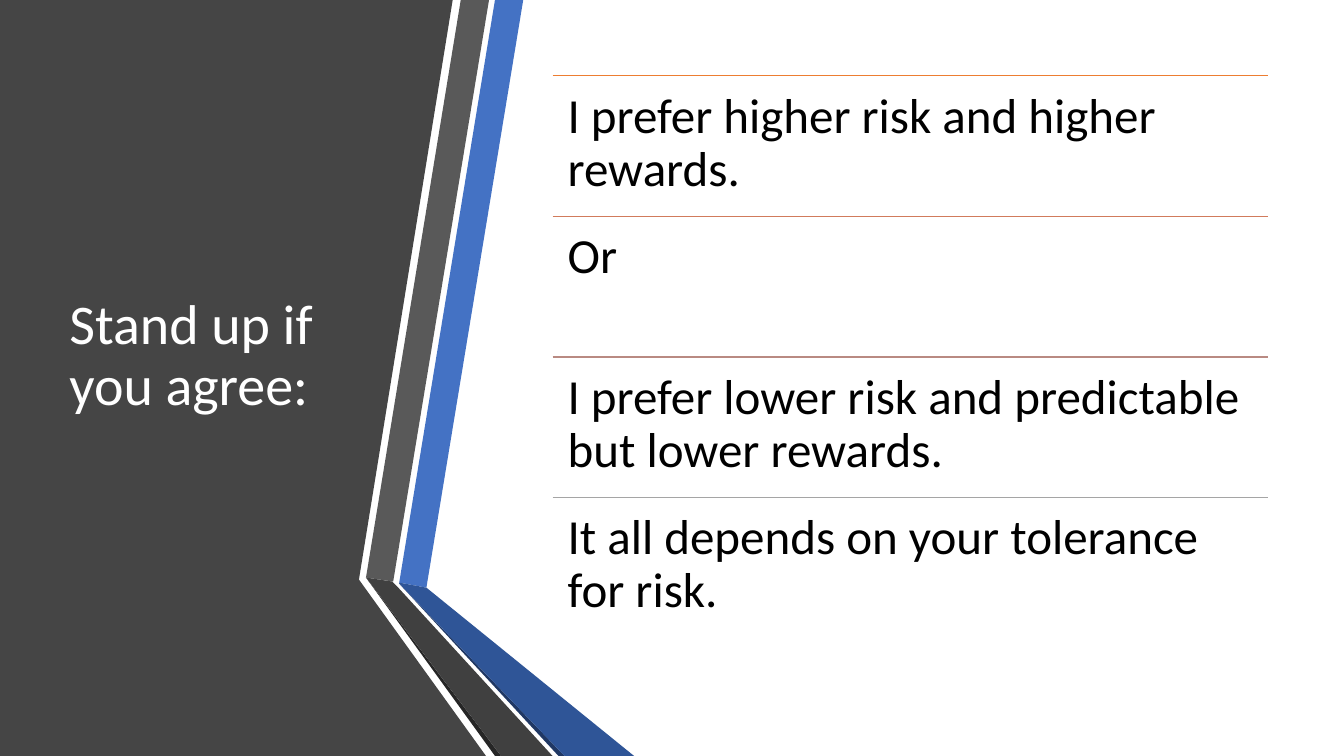
from lxml.etree import SubElement
from pptx import Presentation
from pptx.dml.color import RGBColor
from pptx.enum.shapes import MSO_CONNECTOR
from pptx.enum.text import MSO_ANCHOR
from pptx.oxml.ns import qn
from pptx.util import Inches, Pt

WIDTH, HEIGHT = 13.33, 7.5
FONT = "Calibri"
COLORS = {
    "panel": "454545", "blue": "4472C4", "gray": "595959",
    "gray_edge": "262626", "blue_edge": "203864",
    "blue_fold": "2F5597", "gray_fold": "404040",
    "white": "FFFFFF", "black": "000000",
}
# Outlines in hundredths of an inch, as the builder keeps whole units only
UNIT = Inches(0.01)
PANEL = [(0, 0), (449, 0), (356, 575), (482, 750), (0, 750)]
# Ribbon pieces from back to front: colour name and corner points
RIBBONS = [
    ("blue", [(396, 578), (423, 583), (519, 0), (491, 0)]),
    ("gray", [(485, 0), (457, 0), (363, 573), (390, 577)]),
    ("gray_edge", [(363, 573), (491, 750), (497, 750)]),
    ("blue_edge", [(396, 579), (554, 750), (560, 750)]),
    ("blue_fold", [(396, 579), (560, 750), (629, 750), (423, 583), (396, 578)]),
    ("gray_fold", [(548, 750), (395, 583), (389, 577), (363, 573), (497, 750)]),
]
# Statements, each with the colour of the rule above it
STATEMENTS = [
    ("I prefer higher risk and higher rewards.", "ED7D31"),
    ("Or", "D17B5C"),
    ("I prefer lower risk and predictable but lower rewards.", "B98A82"),
    ("It all depends on your tolerance for risk.", "A5A5A5"),
]


def add_polygon(slide, points, color):
    builder = slide.shapes.build_freeform(*points[0], scale=UNIT)
    builder.add_line_segments(points[1:], close=True)
    shape = builder.convert_to_shape()
    shape.shadow.inherit = False
    shape.fill.solid()
    shape.fill.fore_color.rgb = RGBColor.from_string(color)
    shape.line.fill.background()


def add_text(slide, box, text, *, size, color, anchor=MSO_ANCHOR.TOP, inset=(0.1, 0.05)):
    frame = slide.shapes.add_textbox(*map(Inches, box)).text_frame
    frame.word_wrap = True
    frame.vertical_anchor = anchor
    frame.margin_left = frame.margin_right = Inches(inset[0])
    frame.margin_top = frame.margin_bottom = Inches(inset[1])
    paragraph = frame.paragraphs[0]
    paragraph.line_spacing = 0.9
    run = paragraph.add_run()
    run.text = text
    run.font.name = FONT
    run.font.size = Pt(size)
    run.font.color.rgb = RGBColor.from_string(color)


def add_rule(slide, left, top, width, color):
    line = slide.shapes.add_connector(
        MSO_CONNECTOR.STRAIGHT, *map(Inches, (left, top, left + width, top)))
    line.line.color.rgb = RGBColor.from_string(color)
    line.line.width = Pt(1)
    SubElement(line._element.spPr, qn("a:effectLst"))


def add_side_panel(slide, title_box):
    # Dark panel, folded ribbons, then the title
    add_polygon(slide, PANEL, COLORS["panel"])
    for name, points in RIBBONS:
        add_polygon(slide, points, COLORS[name])
    add_text(slide, title_box, "Stand up if you agree:", size=40,
             color=COLORS["white"], anchor=MSO_ANCHOR.MIDDLE)


def add_statements(slide, box):
    # Equal rows, each under its own rule
    left, top, width, height = box
    row = height / len(STATEMENTS)
    for index, (text, color) in enumerate(STATEMENTS):
        row_top = top + index * row
        add_rule(slide, left, row_top, width, color)
        add_text(slide, (left, row_top, width, row), text, size=35,
                 color=COLORS["black"], inset=(0.15, 0.15))


def main():
    presentation = Presentation()
    presentation.slide_width = Inches(WIDTH)
    presentation.slide_height = Inches(HEIGHT)
    slide = presentation.slides.add_slide(presentation.slide_layouts[6])
    slide.background.fill.solid()
    slide.background.fill.fore_color.rgb = RGBColor.from_string(COLORS["white"])
    top, height = HEIGHT * 0.1, 5.58
    add_side_panel(slide, (0.59, top, 3.04, height))
    add_statements(slide, (5.48, top, 7.1, height))
    presentation.save("out.pptx")


if __name__ == "__main__":
    main()
